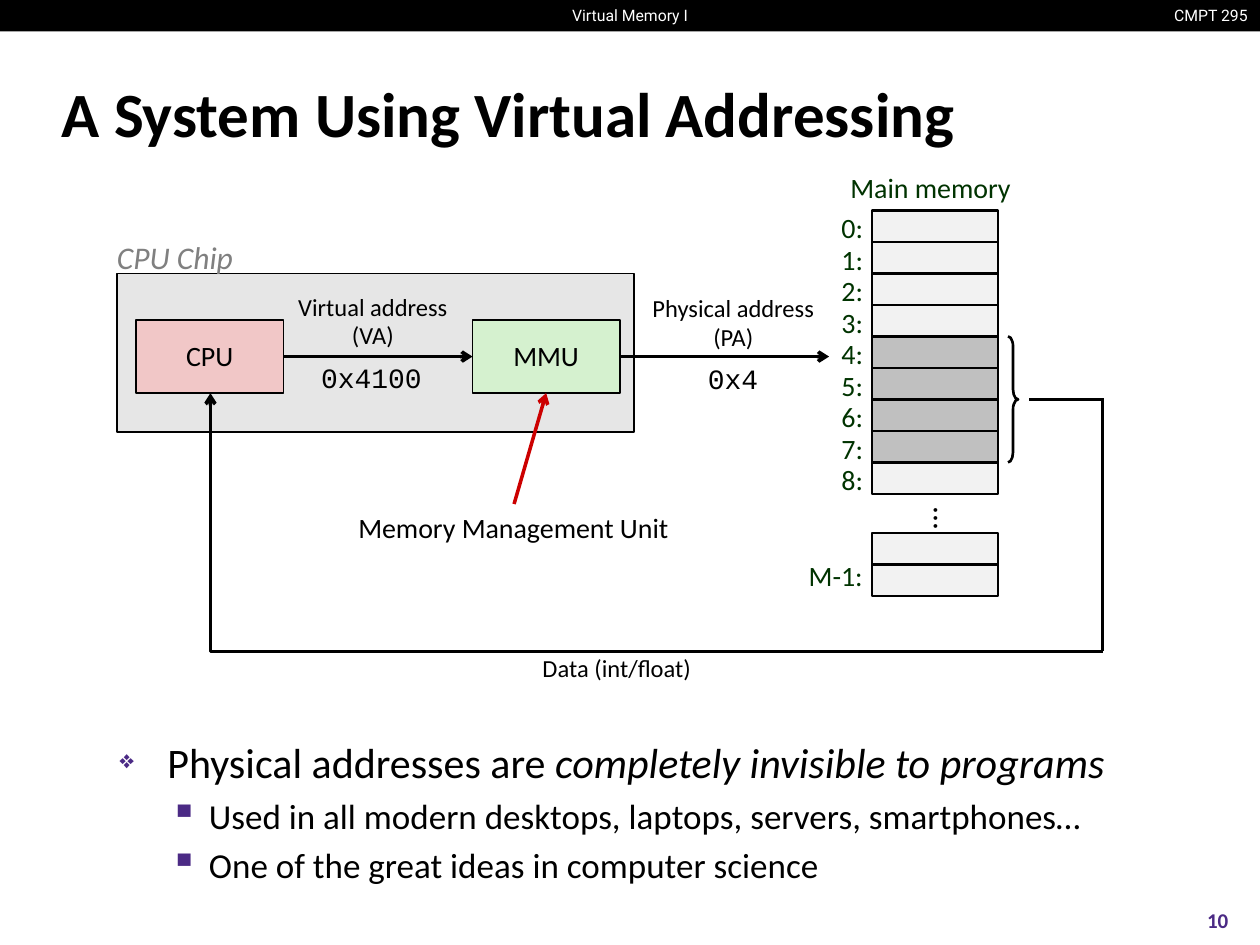
from lxml import etree
from pptx import Presentation
from pptx.dml.color import RGBColor
from pptx.enum import shapes, text
from pptx.oxml import ns, parse_xml
from pptx.util import Inches, Pt

BLACK = RGBColor(0x00, 0x00, 0x00)
WHITE = RGBColor(0xFF, 0xFF, 0xFF)
GREEN = RGBColor(0x00, 0x33, 0x00)
GRAY = RGBColor(0x80, 0x80, 0x80)
PURPLE = RGBColor(0x4B, 0x2A, 0x85)
RED = RGBColor(0xCC, 0x00, 0x00)
CHIP = RGBColor(0xE6, 0xE6, 0xE6)
CPU = RGBColor(0xF1, 0xC7, 0xC7)
MMU = RGBColor(0xD5, 0xF1, 0xCF)
CELL = RGBColor(0xF2, 0xF2, 0xF2)
USED = RGBColor(0xC0, 0xC0, 0xC0)

LEFT, CENTER, RIGHT = text.PP_ALIGN.LEFT, text.PP_ALIGN.CENTER, text.PP_ALIGN.RIGHT
TOP, MIDDLE = text.MSO_ANCHOR.TOP, text.MSO_ANCHOR.MIDDLE
RECT = shapes.MSO_SHAPE.RECTANGLE
STRAIGHT, ELBOW = shapes.MSO_CONNECTOR.STRAIGHT, shapes.MSO_CONNECTOR.ELBOW

TITLE = "A System Using Virtual Addressing"
HEADER = dict(size=9, font="Roboto", color=WHITE)
ADDRESS = dict(color=GREEN, spacing=0.88, before=6)
NOTE = dict(size=14, align=CENTER, anchor=MIDDLE, spacing=0.98)
CODE = dict(font="Courier New")
LABELS = [
    ((9.19, 0, 0.81, 0.25), ["CMPT 295"], dict(HEADER, align=RIGHT)),
    ((4.42, 0, 1.16, 0.25), ["Virtual Memory I"], dict(HEADER, align=CENTER)),
    ((9.33, 7.1, 0.67, 0.4), ["10"],
     dict(size=12, color=PURPLE, bold=True, align=CENTER, anchor=MIDDLE)),
    ((6.64, 1.34, 1.49, 0.33), ["Main memory"], dict(ADDRESS, align=CENTER)),
    ((6.32, 4.42, 0.63, 0.33), ["M-1:"], ADDRESS),
    ((5.07, 2.28, 1.5, 0.57), ["Physical address", "(PA)"], NOTE),
    ((2.26, 2.27, 1.4, 0.57), ["Virtual address", "(VA)"], NOTE),
    ((4.2, 5.14, 1.39, 0.33), ["Data (int/float)"], NOTE),
    ((0.83, 1.84, 1.13, 0.4), ["CPU Chip"], dict(size=18, color=GRAY, italic=True)),
    ((5.52, 2.82, 0.61, 0.37), ["0x4"], CODE),
    ((2.45, 2.81, 1.01, 0.37), ["0x4100"], CODE),
    ((2.73, 4, 2.69, 0.37), ["Memory Management Unit"], dict(align=CENTER)),
]
BULLETS = [
    (0, [("Physical addresses are ", False), ("completely invisible to programs", True)]),
    (1, [("Used in all modern desktops, laptops, servers, smartphones…", False)]),
    (1, [("One of the great ideas in computer science", False)]),
]
LEVELS = [
    dict(size=24, char="❖", scale=60, margin=0.38, indent=-0.38),
    dict(size=20, char="▪", scale=110, margin=0.71, indent=-0.31),
]
ROW_H, MEM_X, MEM_Y, MEM_W = 0.25, 6.92, 1.67, 1
ROWS, USED_ROWS = 9, range(4, 8)
LAST_ROWS_Y = 4.23


def add_run(p, words, size=16, font="Calibri", color=BLACK, bold=False, italic=False):
    r = p.add_run()
    r.text = words
    r.font.size, r.font.name = Pt(size), font
    r.font.bold, r.font.italic = bold, italic
    r.font.color.rgb = color


def write(sp, lines, align=LEFT, anchor=TOP, wrap=False, spacing=None, before=None, **font):
    tf = sp.text_frame
    tf.word_wrap, tf.vertical_anchor = wrap, anchor
    for i, line in enumerate(lines):
        p = tf.add_paragraph() if i else tf.paragraphs[0]
        p.alignment = align
        if spacing:
            p.line_spacing = spacing
        if before:
            p.space_before = Pt(before)
        add_run(p, line, **font)
    return sp


def add_box(s, box):
    return s.shapes.add_textbox(*map(Inches, box))


def add_shape(s, box, fill, width=1.0, kind=RECT):
    sp = s.shapes.add_shape(kind, *map(Inches, box))
    sp.shadow.inherit = False
    if fill is None:
        sp.fill.background()
    else:
        sp.fill.solid()
        sp.fill.fore_color.rgb = fill
    sp.line.color.rgb = BLACK
    sp.line.width = Pt(width)
    return sp


def add_line(s, start, end, color=BLACK, arrow=False, kind=STRAIGHT):
    c = s.shapes.add_connector(kind, *map(Inches, start + end))
    c.line.color.rgb = color
    c.line.width = Pt(2)
    if arrow:
        etree.SubElement(c.line._get_or_add_ln(), ns.qn("a:tailEnd"), type="arrow")
    etree.SubElement(c._element.spPr, ns.qn("a:effectLst"))
    return c


def set_indent(p, margin, indent):
    pPr = p._p.get_or_add_pPr()
    pPr.set("marL", str(Inches(margin)))
    pPr.set("indent", str(Inches(indent)))
    return pPr


def add_bullets(s, box):
    tf = add_box(s, box).text_frame
    tf.word_wrap = True
    for i, (level, runs) in enumerate(BULLETS):
        fmt = LEVELS[level]
        p = tf.add_paragraph() if i else tf.paragraphs[0]
        p.level = level
        pPr = set_indent(p, fmt["margin"], fmt["indent"])
        for xml in (
            '<a:spcBef %s><a:spcPct val="20000"/></a:spcBef>',
            f'<a:buClr %s><a:srgbClr val="{PURPLE}"/></a:buClr>',
            f'<a:buSzPct %s val="{fmt["scale"] * 1000}"/>',
            f'<a:buChar %s char="{fmt["char"]}"/>',
        ):
            pPr.append(parse_xml(xml % ns.nsdecls("a")))
        for words, italic in runs:
            add_run(p, words, size=fmt["size"], italic=italic)


def add_memory(s):
    for i in range(ROWS):
        y = MEM_Y + i * ROW_H
        add_shape(s, (MEM_X, y, MEM_W, ROW_H), USED if i in USED_ROWS else CELL, 1.5)
        write(add_box(s, (6.58, y - 0.01, 0.39, 0.33)), [f"{i}:"], **ADDRESS)
    for i in range(2):
        add_shape(s, (MEM_X, LAST_ROWS_Y + i * ROW_H, MEM_W, ROW_H), CELL, 1.5)
    dots = write(add_box(s, (7, 3.92, 1, 0.25)), ["..."], size=18, align=CENTER,
                 anchor=MIDDLE, spacing=0.98)
    dots.text_frame._txBody.bodyPr.set("vert", "eaVert")
    dots.text_frame.paragraphs[0]._p.get_or_add_pPr().set("rtl", "1")
    brace = add_shape(s, (8, MEM_Y + USED_ROWS[0] * ROW_H, 0.08, len(USED_ROWS) * ROW_H),
                      None, 1.5, shapes.MSO_SHAPE.RIGHT_BRACE)
    brace.adjustments[0], brace.adjustments[1] = 1, 0.5


def add_flow(s):
    cpu, mmu = [
        write(add_shape(s, (x, 2.54, 1.17, 0.58), fill), [name],
              align=CENTER, anchor=MIDDLE, spacing=0.98)
        for x, fill, name in ((1.08, CPU, "CPU"), (3.75, MMU, "MMU"))
    ]
    virtual = add_line(s, (2.25, 2.83), (3.75, 2.83), arrow=True)
    virtual.begin_connect(cpu, 3)
    virtual.end_connect(mmu, 1)
    physical = add_line(s, (4.92, 2.83), (6.58, 2.83), arrow=True)
    physical.begin_connect(mmu, 3)
    pointer = add_line(s, (4.08, 4), (4.33, 3.12), color=RED, arrow=True)
    pointer.end_connect(mmu, 2)
    add_line(s, (8.17, 3.17), (8.75, 3.17))
    add_line(s, (8.75, 3.16), (8.75, 5.17))
    data = add_line(s, (1.67, 3.12), (8.75, 5.17), arrow=True, kind=ELBOW)
    spPr = data._element.spPr
    spPr.find(ns.qn("a:xfrm")).set("rot", str(180 * 60000))
    spPr.find(ns.qn("a:prstGeom")).set("prst", "bentConnector2")


def main():
    prs = Presentation()
    prs.slide_width, prs.slide_height = Inches(10), Inches(7.5)
    s = prs.slides.add_slide(prs.slide_layouts[5])
    title = s.shapes.title
    title.left, title.top, title.width, title.height = map(Inches, (0.39, 0.48, 9.19, 0.83))
    write(title, [TITLE], anchor=MIDDLE, wrap=True, size=36, bold=True)
    set_indent(title.text_frame.paragraphs[0], 0.13, -0.13)
    bar = add_shape(s, (0, 0, 10, 0.25), BLACK)
    bar.line.fill.background()
    add_shape(s, (0.93, 2.17, 4.1, 1.26), CHIP)
    add_memory(s)
    add_flow(s)
    for box, lines, fmt in LABELS:
        write(add_box(s, box), lines, **fmt)
    add_bullets(s, (0.85, 5.8, 9.15, 1.4))
    prs.save("out.pptx")


if __name__ == "__main__":
    main()
